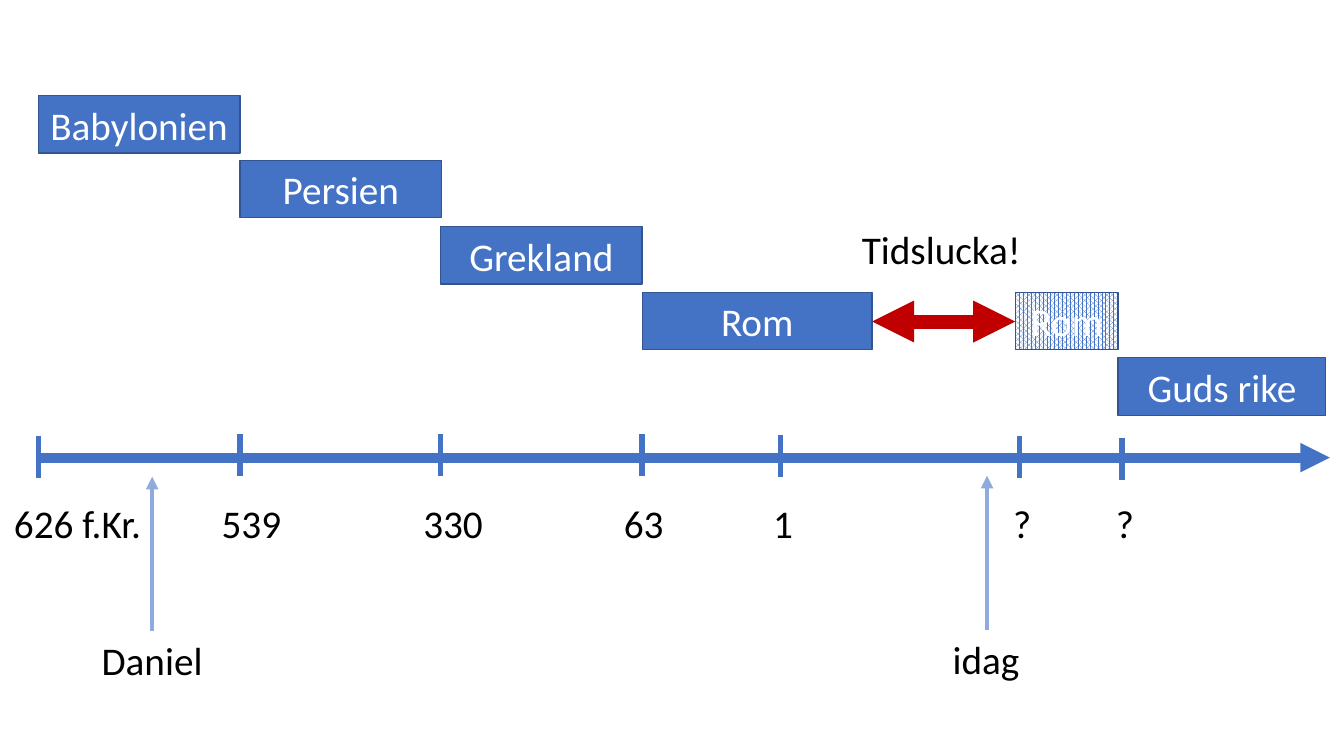
import lxml.etree
import pptx
import pptx.util
import pptx.dml.color
import pptx.enum.dml
import pptx.enum.shapes
import pptx.enum.text
import pptx.oxml.ns

Inches = pptx.util.Inches
Pt = pptx.util.Pt
qn = pptx.oxml.ns.qn
BLUE, WHITE = "4472C4", "FFFFFF"
BOX_HEIGHT = 0.57
FONT = {"name": "Calibri", "size": Pt(28)}


def rgb(color):
    return pptx.dml.color.RGBColor.from_string(color)


def add_line(x1, y1, x2, y2, color, width, *ends):
    """Draw a line; ends names the arrowheads, headEnd before tailEnd."""
    c = s.shapes.add_connector(
        pptx.enum.shapes.MSO_CONNECTOR.STRAIGHT,
        Inches(x1), Inches(y1), Inches(x2), Inches(y2))
    c.line.color.rgb = rgb(color)
    c.line.width = Pt(width)
    properties = c.element.spPr
    for end in ends:
        lxml.etree.SubElement(properties.find(qn("a:ln")), qn("a:" + end), type="triangle")
    lxml.etree.SubElement(properties, qn("a:effectLst"))


prs = pptx.Presentation()
prs.slide_width, prs.slide_height = Inches(13.33), Inches(7.5)
s = prs.slides.add_slide(prs.slide_layouts[6])

# Time axis and its ticks
add_line(0.38, 4.54, 13.19, 4.54, BLUE, 7, "tailEnd")
ticks = [(0.38, 4.33), (2.38, 4.31), (4.37, 4.31), (6.37, 4.31),
         (7.74, 4.32), (10.11, 4.33), (11.13, 4.35)]
for x, top in ticks:
    add_line(x, top, x, top + 0.41, BLUE, 4)

# Kingdoms
kingdoms = [
    ("Babylonien", 0.38, 0.95, 2, False),
    ("Persien", 2.38, 1.59, 2, False),
    ("Grekland", 4.37, 2.25, 2, False),
    ("Rom", 6.37, 2.9, 2.28, False),
    ("Rom", 10.07, 2.9, 1.02, True),
    ("Guds rike", 11.09, 3.55, 2.06, False),
]
for name, left, top, width, hatched in kingdoms:
    sp = s.shapes.add_shape(
        pptx.enum.shapes.MSO_SHAPE.RECTANGLE,
        Inches(left), Inches(top), Inches(width), Inches(BOX_HEIGHT))
    sp.shadow.inherit = False
    if hatched:
        sp.fill.patterned()
        sp.fill.pattern = pptx.enum.dml.MSO_PATTERN.PERCENT_75
        sp.fill.back_color.rgb = rgb(WHITE)
    else:
        sp.fill.solid()
    sp.fill.fore_color.rgb = rgb(BLUE)
    sp.line.color.rgb = rgb("325491")
    sp.line.width = Pt(1)
    tf = sp.text_frame
    tf.vertical_anchor = pptx.enum.text.MSO_ANCHOR.MIDDLE
    p = tf.paragraphs[0]
    p.alignment = pptx.enum.text.PP_ALIGN.CENTER
    r = p.add_run()
    r.text = name
    for key, value in FONT.items():
        setattr(r.font, key, value)
    r.font.color.rgb = rgb(WHITE)

# Dates and captions
labels = [
    ("626 f.Kr.", 0.04, 4.9, 1.48),
    ("539", 2.1, 4.9, 0.8),
    ("330", 4.1, 4.9, 0.8),
    ("63", 6.09, 4.9, 0.6),
    ("1", 7.57, 4.9, 0.4),
    ("?", 9.95, 4.9, 0.38),
    ("?", 10.97, 4.9, 0.38),
    ("Daniel", 0.91, 6.26, 1.21),
    ("idag", 9.35, 6.25, 0.87),
    ("Tidslucka!", 8.45, 2.19, 1.79),
]
for text, left, top, width in labels:
    tf = s.shapes.add_textbox(
        Inches(left), Inches(top), Inches(width), Inches(BOX_HEIGHT)).text_frame
    tf.word_wrap = False
    tf.auto_size = pptx.enum.text.MSO_AUTO_SIZE.SHAPE_TO_FIT_TEXT
    r = tf.paragraphs[0].add_run()
    r.text = text
    for key, value in FONT.items():
        setattr(r.font, key, value)
    r.font.color.rgb = rgb("000000")

# Pointers to Daniel and today, and the time gap
for x, bottom in [(1.51, 6.26), (9.79, 6.25)]:
    add_line(x, bottom, x, bottom - 1.53, "8FAADC", 3, "tailEnd")
add_line(10.07, 3.19, 8.65, 3.19, "C00000", 10, "headEnd", "tailEnd")

prs.save("out.pptx")
